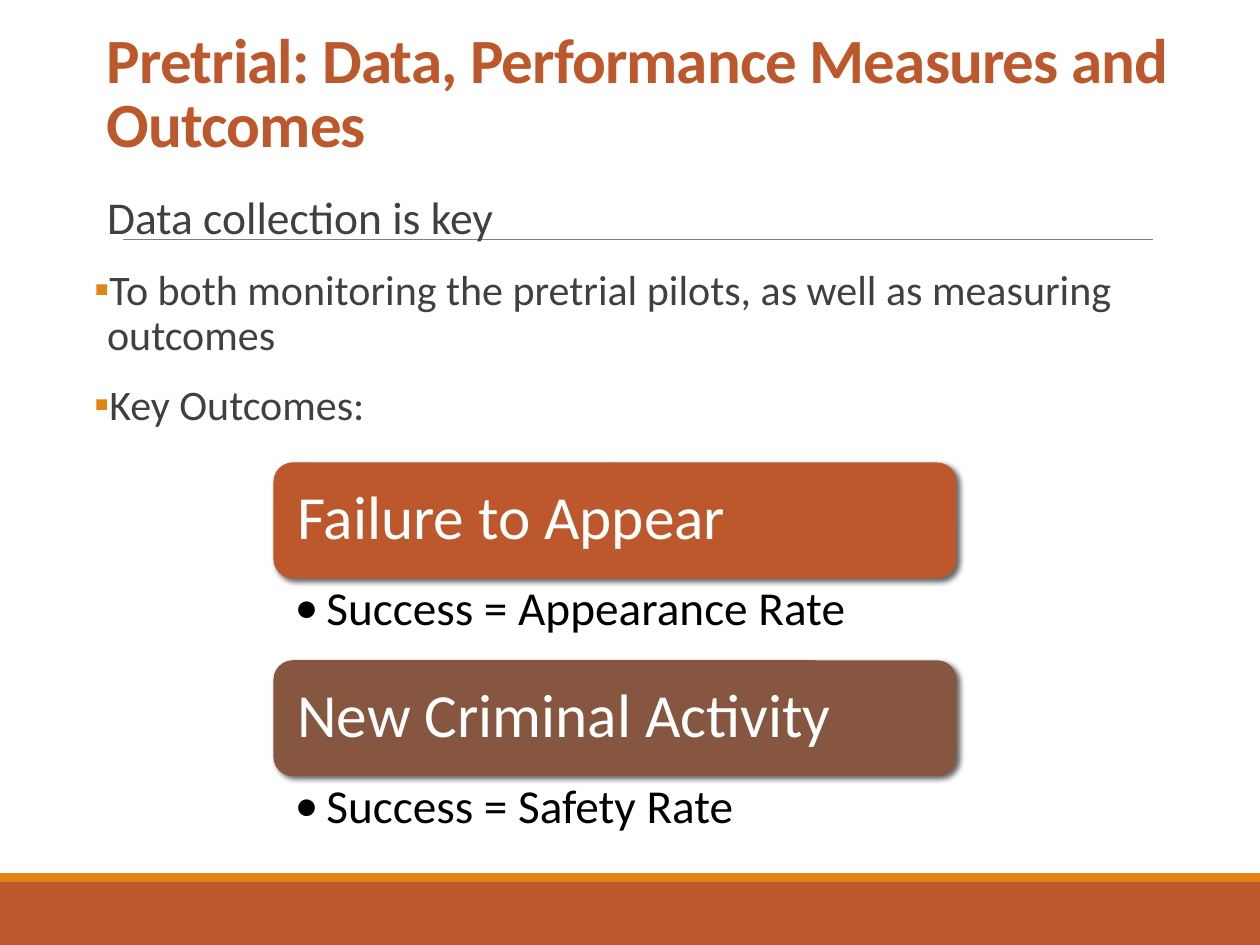
"""Builds the slide on pretrial data, performance measures and outcomes."""
from lxml import etree
from pptx import Presentation
from pptx import util as u
from pptx.dml.color import RGBColor
from pptx.enum import shapes, text
from pptx.oxml import parse_xml
from pptx.oxml.ns import qn

COLORS = {"rust": "BD582C", "orange": "E48312", "brown": "865640", "rule": "808080",
          "body": "404040", "white": "FFFFFF", "black": "000000"}
SHADOW = (
    '<a:effectLst xmlns:a="http://schemas.openxmlformats.org/drawingml/2006/main">'
    '<a:outerShdw blurRad="38100" dist="25400" dir="2700000" rotWithShape="0">'
    '<a:srgbClr val="000000"><a:alpha val="60000"/></a:srgbClr>'
    '</a:outerShdw></a:effectLst>')

prs = Presentation()
prs.slide_width, prs.slide_height = u.Inches(10), u.Inches(7.5)
slide = prs.slides.add_slide(prs.slide_layouts[6])


def add_block(kind, left, top, width, height, color):
    block = slide.shapes.add_shape(kind, *map(u.Inches, (left, top, width, height)))
    block.shadow.inherit = False
    block.fill.solid()
    block.fill.fore_color.rgb = RGBColor.from_string(COLORS[color])
    block.line.fill.background()
    return block


def add_text(place, insets, anchor, lines, size_color, spacing, indent=0, bullet_color=None):
    box = slide.shapes.add_textbox(*map(u.Inches, place))
    frame = box.text_frame
    frame.word_wrap = True
    frame.vertical_anchor = anchor
    frame.margin_left, frame.margin_top, frame.margin_right, frame.margin_bottom = map(u.Inches, insets)
    line_spacing, before, after = spacing
    for number, (words, size, bullet) in enumerate(lines):
        paragraph = frame.paragraphs[0] if number == 0 else frame.add_paragraph()
        paragraph.line_spacing = line_spacing
        paragraph.space_before, paragraph.space_after = u.Pt(before), u.Pt(after)
        props = paragraph._p.get_or_add_pPr()
        props.set("marL", str(u.Inches(indent)))
        if bullet:
            props.set("indent", str(-u.Inches(indent)))
            if bullet_color:
                tint = etree.SubElement(props, qn("a:buClr"))
                etree.SubElement(tint, qn("a:srgbClr"), val=COLORS[bullet_color])
            etree.SubElement(props, qn("a:buFont"), typeface="Calibri")
            etree.SubElement(props, qn("a:buChar"), char=bullet)
        run = paragraph.add_run()
        run.text = words
        run.font.name, run.font.size = "Calibri", u.Pt(size)
        run.font.color.rgb = RGBColor.from_string(COLORS[size_color])
    return frame


add_block(shapes.MSO_SHAPE.RECTANGLE, 0, 7, 10, 0.5, "rust")
add_block(shapes.MSO_SHAPE.RECTANGLE, 0, 6.93, 10, 0.07, "orange")

rule = slide.shapes.add_connector(
    shapes.MSO_CONNECTOR.STRAIGHT, *map(u.Inches, (0.98, 1.9, 9.15, 1.9)))
rule.line.color.rgb = RGBColor.from_string(COLORS["rule"])
rule.line.width = u.Pt(0.5)
etree.SubElement(rule._element.spPr, qn("a:effectLst"))

title = add_text((0.75, 0.17, 8.91, 1.15), (0.1, 0.05, 0.1, 0.05), text.MSO_ANCHOR.BOTTOM,
                 [("Pretrial: Data, Performance Measures and Outcomes", 36, None)],
                 "rust", (0.85, 0, 0))
title_font = title.paragraphs[0].runs[0].font
title_font.bold = True
title_font._element.set("spc", "-50")

add_text((0.75, 1.5, 9, 5.5), (0, 0.05, 0, 0.05), text.MSO_ANCHOR.TOP,
         [("Data collection is key", 26, None),
          ("To both monitoring the pretrial pilots, as well as measuring outcomes", 24, "▪"),
          ("Key Outcomes:", 24, "▪")],
         "body", (0.9, 12, 2), 0.1, "orange")

outcomes = [("Failure to Appear", "Success = Appearance Rate", "rust"),
            ("New Criminal Activity", "Success = Safety Rate", "brown")]
for row, (outcome, success, color) in enumerate(outcomes):
    top = 3.67 + row * 1.57
    card = add_block(shapes.MSO_SHAPE.ROUNDED_RECTANGLE, 2.17, top, 5.42, 0.92, color)
    effects = card._element.spPr.find(qn("a:effectLst"))
    card._element.spPr.replace(effects, parse_xml(SHADOW))
    add_text((2.21, top + 0.04, 5.33, 0.83), (0.15,) * 4, text.MSO_ANCHOR.MIDDLE,
             [(outcome, 35, None)], "white", (0.9, 0, 0))
    add_text((2.17, top + 0.92, 5.42, 0.63), (0.17, 0.05, 0.27, 0.05), text.MSO_ANCHOR.TOP,
             [(success, 27, "•")], "black", (0.9, 0, 0), 0.25)

prs.save("out.pptx")
